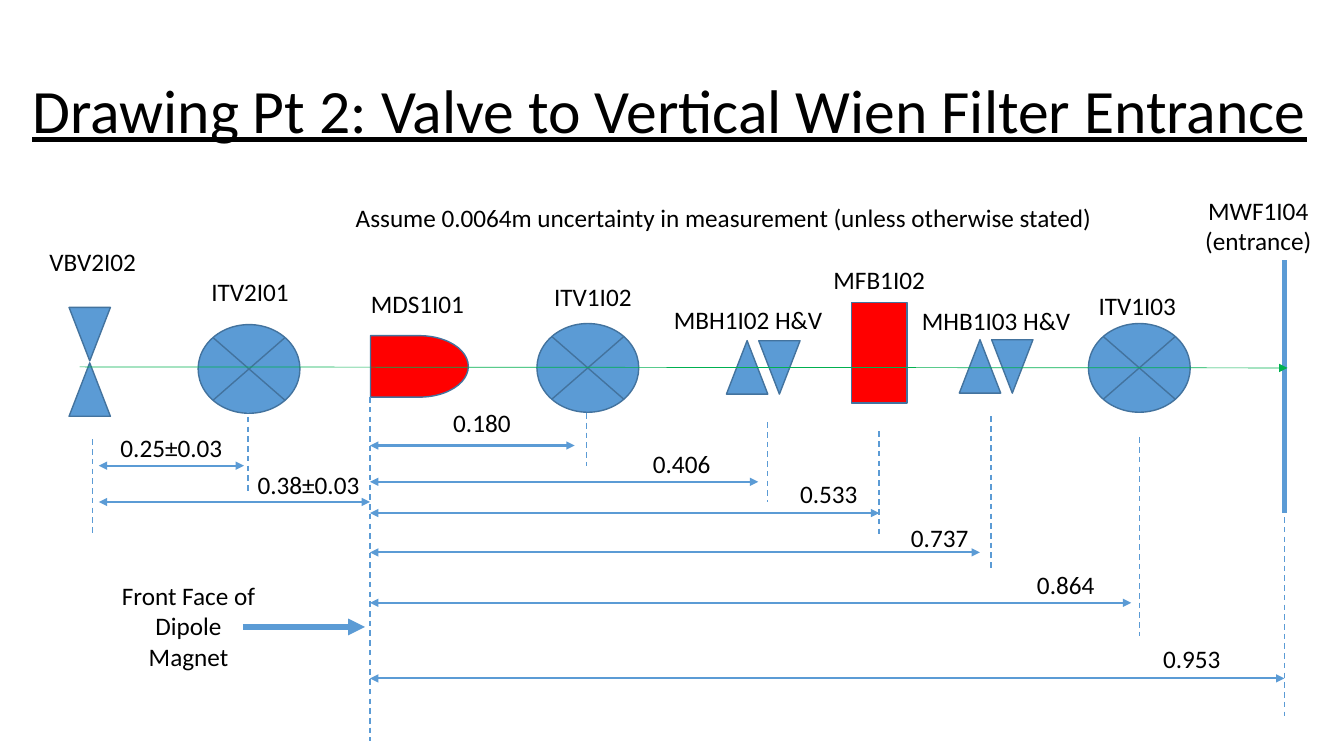
from dataclasses import dataclass

from lxml import etree
from pptx import Presentation
from pptx.dml.color import RGBColor
from pptx.enum.dml import MSO_LINE
from pptx.enum.shapes import MSO_CONNECTOR, MSO_SHAPE
from pptx.enum.text import MSO_ANCHOR, MSO_AUTO_SIZE, PP_ALIGN
from pptx.oxml.ns import qn
from pptx.util import Inches, Pt

LEFT, CENTER = PP_ALIGN.LEFT, PP_ALIGN.CENTER
MIDDLE = MSO_ANCHOR.MIDDLE
FIXED, GROW = MSO_AUTO_SIZE.NONE, MSO_AUTO_SIZE.SHAPE_TO_FIT_TEXT
DASH = MSO_LINE.DASH
STRAIGHT = MSO_CONNECTOR.STRAIGHT
CROSS = MSO_SHAPE.FLOWCHART_SUMMING_JUNCTION
DELAY = MSO_SHAPE.FLOWCHART_DELAY
CONE = MSO_SHAPE.ISOSCELES_TRIANGLE
BLOCK = MSO_SHAPE.RECTANGLE
TITLE_ONLY = 5
COLS, ROWS = 13.33, 7.5
CELL = Inches(1)
HEAD, TAIL = "a:headEnd", "a:tailEnd"
FACE, GATE = 3.67, 12.74


@dataclass(frozen=True)
class Theme:
    font: str = "Calibri"
    ink: RGBColor = RGBColor(0, 0, 0)
    blue: RGBColor = RGBColor(0x5B, 0x9B, 0xD5)
    edge: RGBColor = RGBColor(0x43, 0x73, 0x9E)
    red: RGBColor = RGBColor(0xFF, 0, 0)
    green: RGBColor = RGBColor(0, 0xB0, 0x50)
    title: Pt = Pt(44)
    body: Pt = Pt(18)
    hair: Pt = Pt(0.5)
    thin: Pt = Pt(1)
    span: Pt = Pt(1.5)
    bold: Pt = Pt(4)


@dataclass(frozen=True)
class Box:
    left: float
    top: float
    width: float
    height: float

    def point(self, x, y):
        return int((self.left + x) * CELL), int((self.top + y) * CELL)

    def frame(self, x, y, width, height):
        return (*self.point(x, y), int(width * CELL), int(height * CELL))


THEME = Theme()


def dress(item, values):
    for name, value in values.items():
        setattr(item, name, value)


def write(frame, text, size, align, **extra):
    frame.text = text
    line = frame.paragraphs[0]
    line.alignment = align
    look = {"name": THEME.font, "size": size, **extra}
    dress(line.runs[0].font, look)
    line.runs[0].font.color.rgb = THEME.ink
    return line


def label(shapes, box, text, mid, top, width, height=0.4, align=CENTER):
    note = shapes.add_textbox(*box.frame(mid - width / 2, top, width, height))
    dress(note.text_frame, {"word_wrap": True, "auto_size": GROW})
    write(note.text_frame, text, THEME.body, align)


def shape(shapes, box, kind, mid, top, width, height, fill=THEME.blue, turn=0):
    part = shapes.add_shape(kind, *box.frame(mid - width / 2, top, width, height))
    part.rotation = turn
    part.shadow.inherit = False
    part.fill.solid()
    part.fill.fore_color.rgb = fill
    part.line.color.rgb = THEME.edge
    part.line.width = THEME.thin


def stroke(shapes, box, start, end, width, color=THEME.blue, dash=None, tips=()):
    line = shapes.add_connector(STRAIGHT, *box.point(*start), *box.point(*end))
    line.line.color.rgb = color
    dress(line.line, {"width": width, "dash_style": dash})
    props = line.element.spPr
    for tip in tips:
        etree.SubElement(props.find(qn("a:ln")), qn(tip), type="triangle")
    etree.SubElement(props, qn("a:effectLst"))


def heading(slide, box):
    title = slide.shapes.title
    spot = zip(("left", "top", "width", "height"), box.frame(0, 0, box.width, box.height))
    dress(title, dict(spot))
    dress(title.text_frame, {"word_wrap": True, "auto_size": FIXED, "vertical_anchor": MIDDLE})
    text = "Drawing Pt 2: Valve to Vertical Wien Filter Entrance"
    line = write(title.text_frame, text, THEME.title, LEFT, underline=True)
    line.line_spacing = 0.9


def beam(slide, box):
    shapes = slide.shapes
    for mid, top in ((2.47, 1.42), (5.83, 1.41), (11.3, 1.41)):
        shape(shapes, box, CROSS, mid, top, 1.01, 0.88)
    shape(shapes, box, DELAY, 4.16, 1.53, 0.97, 0.61, THEME.red)
    shape(shapes, box, BLOCK, 8.72, 1.2, 0.55, 1, THEME.red)
    for mid, top in ((7.57, 1.58), (9.88, 1.57)):
        pair = shapes.add_group_shape().shapes
        for shift, turn in ((-0.16, 0), (0.16, 180)):
            shape(pair, box, CONE, mid + shift, top, 0.41, 0.53, turn=turn)
    for top, turn in ((1.25, 180), (1.8, 0)):
        shape(shapes, box, CONE, 0.89, top, 0.41, 0.53, turn=turn)
    stroke(shapes, box, (GATE, 0.78), (GATE, 3.29), THEME.bold)
    names = (
        ("VBV2I02", 0.92, 0.59, 1.31),
        ("ITV2I01", 2.48, 0.89, 1.31),
        ("MDS1I01", 4.14, 1.01, 1.31),
        ("ITV1I02", 5.88, 0.94, 1.31),
        ("MBH1I02 H&V", 7.42, 1.17, 2.11),
        ("MFB1I02", 8.72, 0.77, 2.11),
        ("MHB1I03 H&V", 9.88, 1.18, 2.11),
        ("ITV1I03", 11.28, 1.03, 2.11),
        ("MWF1I04 (entrance)", 12.48, 0.09, 1.7, 0.71),
    )
    for name in names:
        label(shapes, box, *name)
    rule = "Assume 0.0064m uncertainty in measurement (unless otherwise stated)"
    label(shapes, box, rule, 7.32, 0.16, 7.78, align=LEFT)
    stroke(shapes, box, (0.79, 1.84), (12.77, 1.85), THEME.hair, THEME.green, tips=[TAIL])


def scale(slide, box):
    shapes = slide.shapes
    guides = (
        (0.92, 0.46, 1.41), (2.46, 0.14, 0.99), (FACE, 0.04, 3.45),
        (5.82, 0.2, 0.72), (7.61, 0.29, 1.08), (8.72, 0.38, 1.41),
        (9.83, 0.23, 1.75), (11.3, 0.44, 2.41), (GATE, 1.23, 3.2),
    )
    for x, top, end in guides:
        stroke(shapes, box, (x, top), (x, end), THEME.thin, dash=DASH)
    spans = (
        ("0.25±0.03", 0.98, 2.42, 0.72, 1.7, 0.34),
        ("0.38±0.03", 0.98, FACE, 1.08, 3.06, 0.71),
        ("0.180", FACE, 5.7, 0.52, 4.78, 0.09),
        ("0.406", FACE, 7.52, 0.88, 6.76, 0.5),
        ("0.533", FACE, 8.72, 1.19, 8.22, 0.8),
        ("0.737", FACE, 9.72, 1.58, 9.32, 1.23),
        ("0.864", FACE, 11.22, 2.08, 10.57, 1.7),
        ("0.953", FACE, GATE, 2.83, 11.82, 2.43),
    )
    for text, start, end, y, mid, top in spans:
        stroke(shapes, box, (start, y), (end, y), THEME.span, tips=[HEAD, TAIL])
        label(shapes, box, text, mid, top, 1.01 if start == FACE else 1.4)
    label(shapes, box, "Front Face of Dipole Magnet", 1.87, 1.81, 1.58, 1.01)
    stroke(shapes, box, (2.41, 2.32), (3.62, 2.32), THEME.bold, tips=[TAIL])


def main():
    deck = Presentation()
    dress(deck, {"slide_width": int(COLS * CELL), "slide_height": int(ROWS * CELL)})
    slide = deck.slides.add_slide(deck.slide_layouts[TITLE_ONLY])
    heading(slide, Box(0.22, 0.4, 12.94, 1.45))
    beam(slide, Box(0, 1.8, COLS, 3.3))
    scale(slide, Box(0, 3.9, COLS, 3.5))
    deck.save("out.pptx")


if __name__ == "__main__":
    main()
